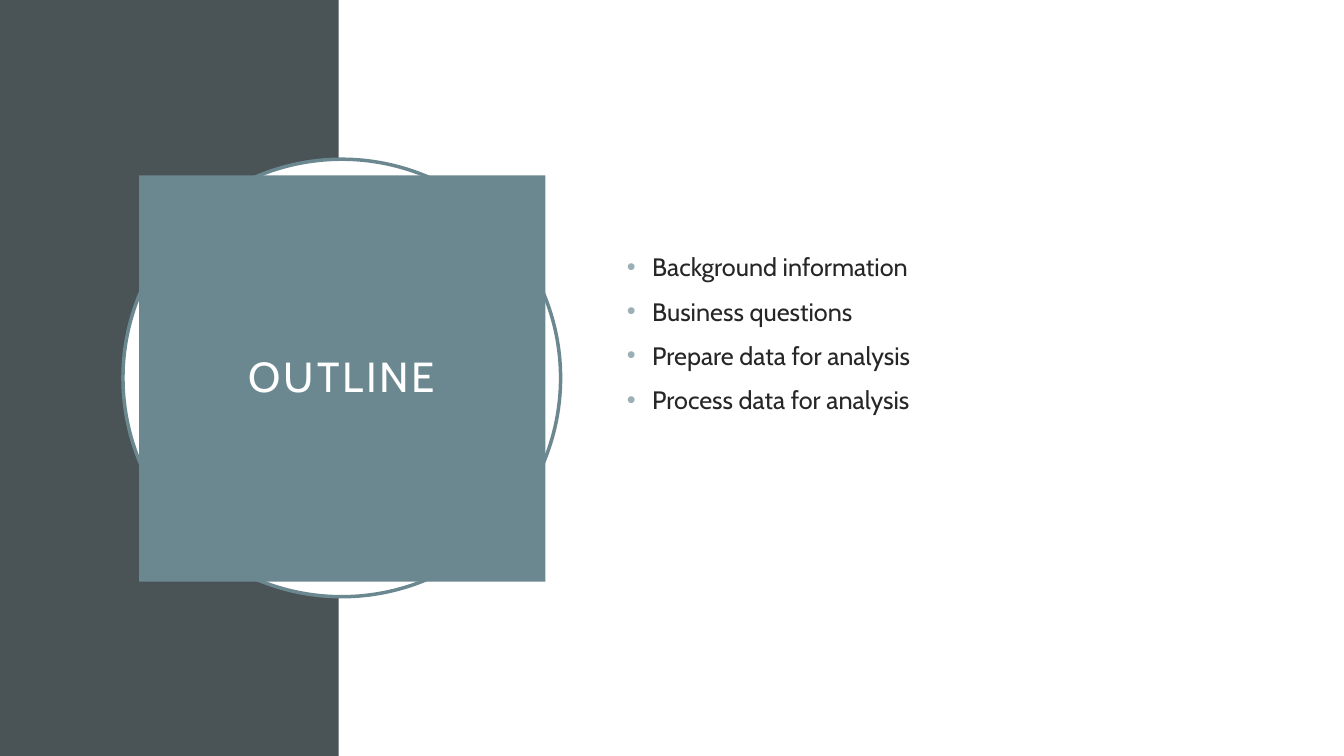
import pptx
import pptx.util
import pptx.dml.color
import pptx.enum.shapes
import pptx.enum.text
import lxml.etree
from pptx.oxml.ns import qn

Inches = pptx.util.Inches
Pt = pptx.util.Pt
RGB = pptx.dml.color.RGBColor
Kind = pptx.enum.shapes.MSO_SHAPE
Align = pptx.enum.text.PP_ALIGN
Anchor = pptx.enum.text.MSO_ANCHOR

SLATE = RGB(0x4A, 0x53, 0x56)
TEAL = RGB(0x6B, 0x88, 0x91)
MIST = RGB(0x9B, 0xAF, 0xB5)
INK = RGB(0x26, 0x26, 0x26)
WHITE = RGB(0xFF, 0xFF, 0xFF)


class Deck:
    """Holds the style and the current slide, and draws its elements."""

    font = "Cabin"

    def __init__(self, show):
        self.slide = show.slides.add_slide(show.slide_layouts[6])

    def style(self, item, values):
        for name, value in values.items():
            setattr(item, name, value)

    def shape(self, kind, box, fill, line=None):
        form = self.slide.shapes.add_shape(kind, *map(Inches, box))
        form.shadow.inherit = False
        form.fill.solid()
        form.fill.fore_color.rgb = fill
        if line:
            form.line.color.rgb = line
            form.line.width = Pt(2.5)
        else:
            form.line.fill.background()
        return form

    def label(self, para, text, size, color):
        run = para.add_run()
        run.text = text
        self.style(run.font, {"name": self.font, "size": Pt(size)})
        run.font.color.rgb = color
        return run

    def title(self, form, text):
        frame = form.text_frame
        pad = Inches(0.2)
        self.style(frame, {"word_wrap": True, "vertical_anchor": Anchor.MIDDLE,
                           "margin_left": pad, "margin_right": pad,
                           "margin_top": pad, "margin_bottom": pad})
        para = frame.paragraphs[0]
        self.style(para, {"alignment": Align.CENTER, "line_spacing": 0.9})
        run = self.label(para, text, 30, WHITE)
        run.font._element.set("spc", "200")

    def bullet(self, para):
        props = para._p.get_or_add_pPr()
        props.set("marL", str(Inches(0.25)))
        props.set("indent", str(-Inches(0.25)))
        tint = lxml.etree.SubElement(props, qn("a:buClr"))
        lxml.etree.SubElement(tint, qn("a:srgbClr"), val=str(MIST))
        lxml.etree.SubElement(props, qn("a:buFont"), typeface="Arial")
        lxml.etree.SubElement(props, qn("a:buChar"), char="•")

    def points(self, box, items):
        frame = self.slide.shapes.add_textbox(*map(Inches, box)).text_frame
        self.style(frame, {"word_wrap": True, "vertical_anchor": Anchor.MIDDLE})
        for row, text in enumerate(items):
            para = frame.add_paragraph() if row else frame.paragraphs[0]
            self.style(para, {"space_before": Pt(10), "alignment": Align.LEFT})
            self.bullet(para)
            self.label(para, text, 18, INK)


def main():
    show = pptx.Presentation()
    show.slide_width = Inches(13.33)
    show.slide_height = Inches(7.5)
    deck = Deck(show)
    deck.shape(Kind.RECTANGLE, (0, 0, 3.36, 7.5), SLATE)
    deck.shape(Kind.OVAL, (1.22, 1.58, 4.34, 4.34), WHITE, TEAL)
    panel = deck.shape(Kind.RECTANGLE, (1.38, 1.74, 4.03, 4.03), TEAL)
    deck.title(panel, "OUTLINE")
    deck.points((6.12, 1.53, 5.82, 3.55), [
        "Background information",
        "Business questions",
        "Prepare data for analysis",
        "Process data for analysis",
    ])
    show.save("out.pptx")


if __name__ == "__main__":
    main()
